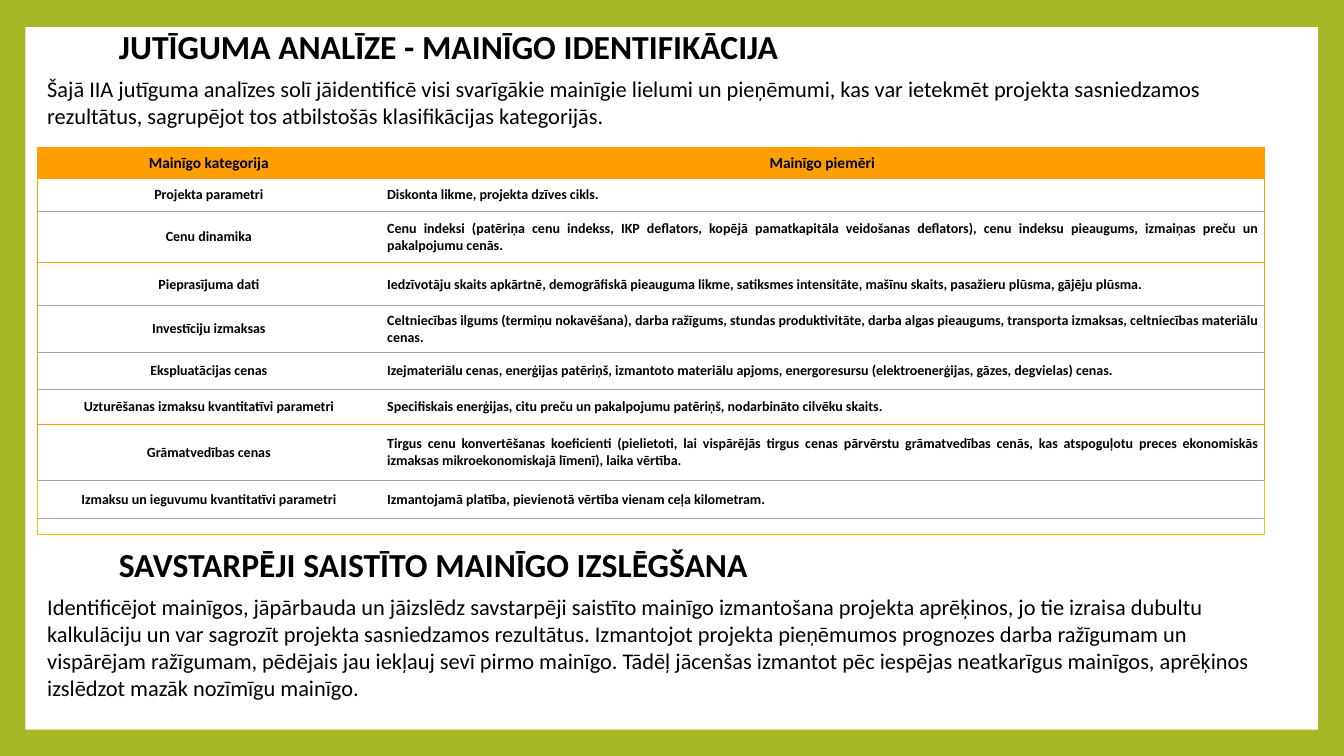
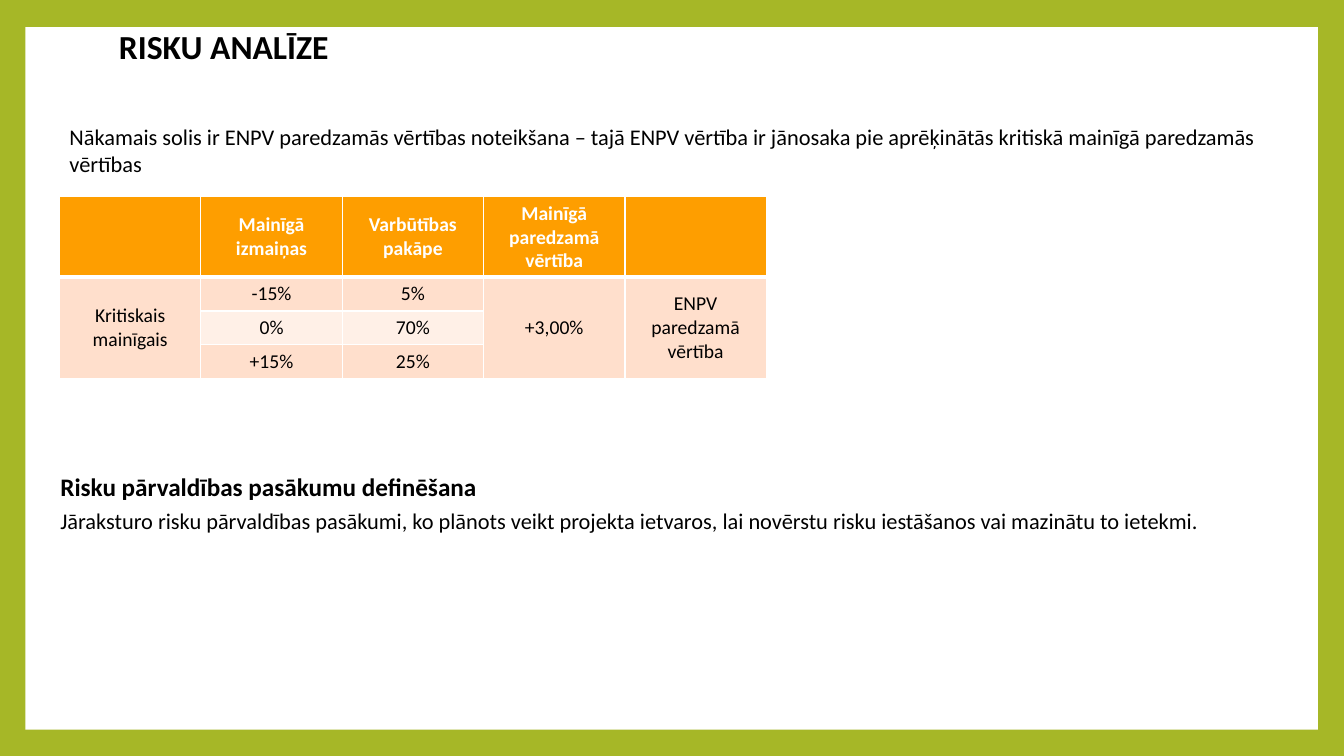
from lxml import etree
from pptx import Presentation
from pptx import util as u
from pptx.dml.color import RGBColor
from pptx.enum import shapes, text
from pptx.oxml import ns

FONT = "Calibri"
BLACK, WHITE, GREEN = "000000", "FFFFFF", "A6B727"
ORANGE, AMBER, GREY = "FE9E00", "FFC000", "A5A5A5"
PEACH, PALE = "FFDFCC", "FFF0E7"
NO_GRID = "{2D5ABB26-0587-4C30-8999-92F81FD0307C}"
LEFT, MID, JUST = text.PP_ALIGN.LEFT, text.PP_ALIGN.CENTER, text.PP_ALIGN.JUSTIFY
CENTRE = text.MSO_ANCHOR.MIDDLE


def paint(target, color):
    """Give a fill one solid colour."""
    target.solid()
    target.fore_color.rgb = RGBColor.from_string(color)


def style(para, size, color=BLACK, bold=False, align=LEFT):
    para.alignment = align
    for run in para.runs:
        font = run.font
        font.name, font.size, font.bold = FONT, u.Pt(size), bold
        font.color.rgb = RGBColor.from_string(color)


def edge(cell, **sides):
    """Draw cell borders; each side (L, R, T, B) is a (colour, points) pair."""
    props = cell._tc.get_or_add_tcPr()
    for side in "LRTB":
        if side in sides:
            color, width = sides[side]
            line = etree.SubElement(props, ns.qn("a:ln" + side), w=str(u.Pt(width)))
            fill = etree.SubElement(line, ns.qn("a:solidFill"))
            etree.SubElement(fill, ns.qn("a:srgbClr"), val=color)


class Deck:
    """Holds the style and current slide; lengths are percent of the slide."""

    def __init__(self):
        self.prs = Presentation()
        self.prs.slide_width, self.prs.slide_height = u.Inches(13.33), u.Inches(7.5)
        self.master = self.prs.slide_master
        paint(self.master.background.fill, GREEN)
        self.framed = False

    def wide(self, share):
        return round(self.prs.slide_width * share / 100)

    def high(self, share):
        return round(self.prs.slide_height * share / 100)

    def place(self, x, y, w, h):
        return self.wide(x), self.high(y), self.wide(w), self.high(h)

    def slide(self, title):
        self.now = self.prs.slides.add_slide(self.prs.slide_layouts[5])
        if not self.framed:
            self.frame()
        self.head(title, shape=self.now.shapes.title)

    def frame(self):
        """Put the white panel on the master, behind every slide."""
        panel = self.now.shapes.add_shape(
            shapes.MSO_SHAPE.RECTANGLE, *self.place(1.88, 3.6, 96.17, 92.93))
        panel.shadow.inherit = False
        paint(panel.fill, WHITE)
        panel.line.fill.background()
        self.master.shapes._spTree.insert(2, panel._element)
        self.framed = True

    def head(self, words, y=3.6, shape=None):
        area = self.place(8.1, y, 87, 5.73)
        shape = shape or self.now.shapes.add_textbox(*area)
        shape.left, shape.top, shape.width, shape.height = area
        box = shape.text_frame
        box.text = words
        box.word_wrap, box.auto_size = True, text.MSO_AUTO_SIZE.NONE
        box.vertical_anchor = CENTRE
        box.paragraphs[0].line_spacing = 0.9
        style(box.paragraphs[0], 24, bold=True)

    def body(self, words, *area):
        box = self.now.shapes.add_textbox(*self.place(*area)).text_frame
        box.word_wrap = True
        box.text = words
        for para in box.paragraphs:
            style(para, 16)
        return box

    def table(self, x, y, cols, rows):
        area = self.place(x, y, sum(cols), sum(rows))
        grid = self.now.shapes.add_table(len(rows), len(cols), *area).table
        grid._tbl.tblPr.find(ns.qn("a:tableStyleId")).text = NO_GRID
        for col, share in zip(grid.columns, cols):
            col.width = self.wide(share)
        for row, share in zip(grid.rows, rows):
            row.height = self.high(share)
        return grid

    def cell(self, cell, words, size, pad, fill=None, **look):
        """Fill one cell; pad is (side, top and bottom) in inches."""
        cell.margin_left = cell.margin_right = u.Inches(pad[0])
        cell.margin_top = cell.margin_bottom = u.Inches(pad[1])
        cell.vertical_anchor = CENTRE
        cell.text = words
        para = cell.text_frame.paragraphs[0]
        style(para, size, **look)
        if not words:
            para._p.get_or_add_endParaRPr().set("sz", str(size * 100))
        if fill:
            paint(cell.fill, fill)
        else:
            cell.fill.background()


KINDS = [
    ("Mainīgo kategorija", "Mainīgo piemēri"),
    ("Projekta parametri", "Diskonta likme, projekta dzīves cikls."),
    ("Cenu dinamika",
     "Cenu indeksi (patēriņa cenu indekss, IKP deflators, kopējā pamatkapitāla "
     "veidošanas deflators), cenu indeksu pieaugums, izmaiņas preču un "
     "pakalpojumu cenās."),
    ("Pieprasījuma dati",
     "Iedzīvotāju skaits apkārtnē, demogrāfiskā pieauguma likme, satiksmes "
     "intensitāte, mašīnu skaits, pasažieru plūsma, gājēju plūsma."),
    ("Investīciju izmaksas",
     "Celtniecības ilgums (termiņu nokavēšana), darba ražīgums, stundas "
     "produktivitāte, darba algas pieaugums, transporta izmaksas, celtniecības "
     "materiālu cenas."),
    ("Ekspluatācijas cenas",
     "Izejmateriālu cenas, enerģijas patēriņš, izmantoto materiālu apjoms, "
     "energoresursu (elektroenerģijas, gāzes, degvielas) cenas."),
    ("Uzturēšanas izmaksu kvantitatīvi parametri",
     "Specifiskais enerģijas, citu preču un pakalpojumu patēriņš, nodarbināto "
     "cilvēku skaits."),
    ("Grāmatvedības cenas",
     "Tirgus cenu konvertēšanas koeficienti (pielietoti, lai vispārējās tirgus "
     "cenas pārvērstu grāmatvedības cenās, kas atspoguļotu preces ekonomiskās "
     "izmaksas mikroekonomiskajā līmenī), laika vērtība."),
    ("Izmaksu un ieguvumu kvantitatīvi parametri",
     "Izmantojamā platība, pievienotā vērtība vienam ceļa kilometram."),
    ("", ""),
]
# Colour of the line under each row; the last two rows read as one.
RULES = [ORANGE, GREY, ORANGE, GREY, GREY, GREY, ORANGE, GREY, None, AMBER]
ODDS = [
    ("", "Mainīgā izmaiņas", "Varbūtības pakāpe", "Mainīgā paredzamā vērtība", ""),
    ("Kritiskais mainīgais", "-15%", "5%", "+3,00%", "ENPV paredzamā vērtība"),
    ("", "0%", "70%", "", ""),
    ("", "+15%", "25%", "", ""),
]


def factors(deck):
    deck.slide("JUTĪGUMA ANALĪZE - MAINĪGO IDENTIFIKĀCIJA")
    deck.body(
        "Šajā IIA jutīguma analīzes solī jāidentificē visi svarīgākie mainīgie "
        "lielumi un pieņēmumi, kas var ietekmēt projekta sasniedzamos rezultātus, "
        "sagrupējot tos atbilstošās klasifikācijas kategorijās.",
        2.78, 9.33, 91.37, 8.53)
    deck.head("SAVSTARPĒJI SAISTĪTO MAINĪGO IZSLĒGŠANA", y=72.13)
    deck.body(
        "Identificējot mainīgos, jāpārbauda un jāizslēdz savstarpēji saistīto "
        "mainīgo izmantošana projekta aprēķinos, jo tie izraisa dubultu kalkulāciju "
        "un var sagrozīt projekta sasniedzamos rezultātus. Izmantojot projekta "
        "pieņēmumos prognozes darba ražīgumam un vispārējam ražīgumam, pēdējais jau "
        "iekļauj sevī pirmo mainīgo. Tādēļ jācenšas izmantot pēc iespējas "
        "neatkarīgus mainīgos, aprēķinos izslēdzot mazāk nozīmīgu mainīgo.",
        2.78, 77.87, 91.37, 15.6)
    grid = deck.table(2.78, 19.47, [25.51, 65.79],
                      [4.13, 4.4, 6.75, 5.73, 6.13, 4.93, 4.67, 7.33, 5.07, 2.13])
    for r, (pair, rule) in enumerate(zip(KINDS, RULES)):
        side = (ORANGE if r < 8 else AMBER, 0.79)
        for c, words in enumerate(pair):
            cell = grid.cell(r, c)
            lines = {"LR"[c]: side}
            if r == 0:
                lines["T"] = side
            elif RULES[r - 1]:
                lines["T"] = (RULES[r - 1], 0.79)
            if rule:
                lines["B"] = (rule, 0.79)
            edge(cell, **lines)
            size = 11 if r == 0 else 10 if words else 8
            deck.cell(cell, words, size, (0.07, 0), ORANGE if r == 0 else None,
                      bold=True, align=JUST if r and c else MID)


def risks(deck):
    deck.slide("RISKU ANALĪZE")
    box = deck.body(
        "Risku pārvaldības pasākumu definēšana\n"
        "Jāraksturo risku pārvaldības pasākumi, ko plānots veikt projekta ietvaros, "
        "lai novērstu risku iestāšanos vai mazinātu to ietekmi.",
        3.75, 62.13, 92.95, 10)
    for para in box.paragraphs:
        para.line_spacing = 0.9
        para.space_before, para.space_after = u.Pt(2), u.Pt(4)
    style(box.paragraphs[0], 18, bold=True)
    deck.body(
        "Nākamais solis ir ENPV paredzamās vērtības noteikšana – tajā ENPV vērtība "
        "ir jānosaka pie aprēķinātās kritiskā mainīgā paredzamās vērtības",
        4.43, 15.6, 92.27, 8.53)
    grid = deck.table(4.43, 26, [10.52] * 5, [10.67] + [4.45] * 3)
    thin, thick = (WHITE, 1), (WHITE, 3)
    for r, row in enumerate(ODDS):
        top = r == 0
        fill = ORANGE if top else PALE if r == 2 else PEACH
        for c, words in enumerate(row):
            cell = grid.cell(r, c)
            edge(cell, L=thin, R=thin, T=thick if r == 1 else thin,
                 B=thick if top else thin)
            deck.cell(cell, words, 14, (0.1, 0.05), fill, bold=top, align=MID,
                      color=WHITE if top else BLACK)
    for c in (0, 3, 4):
        grid.cell(1, c).merge(grid.cell(3, c))


def main():
    deck = Deck()
    factors(deck)
    risks(deck)
    deck.prs.save("out.pptx")


if __name__ == "__main__":
    main()
